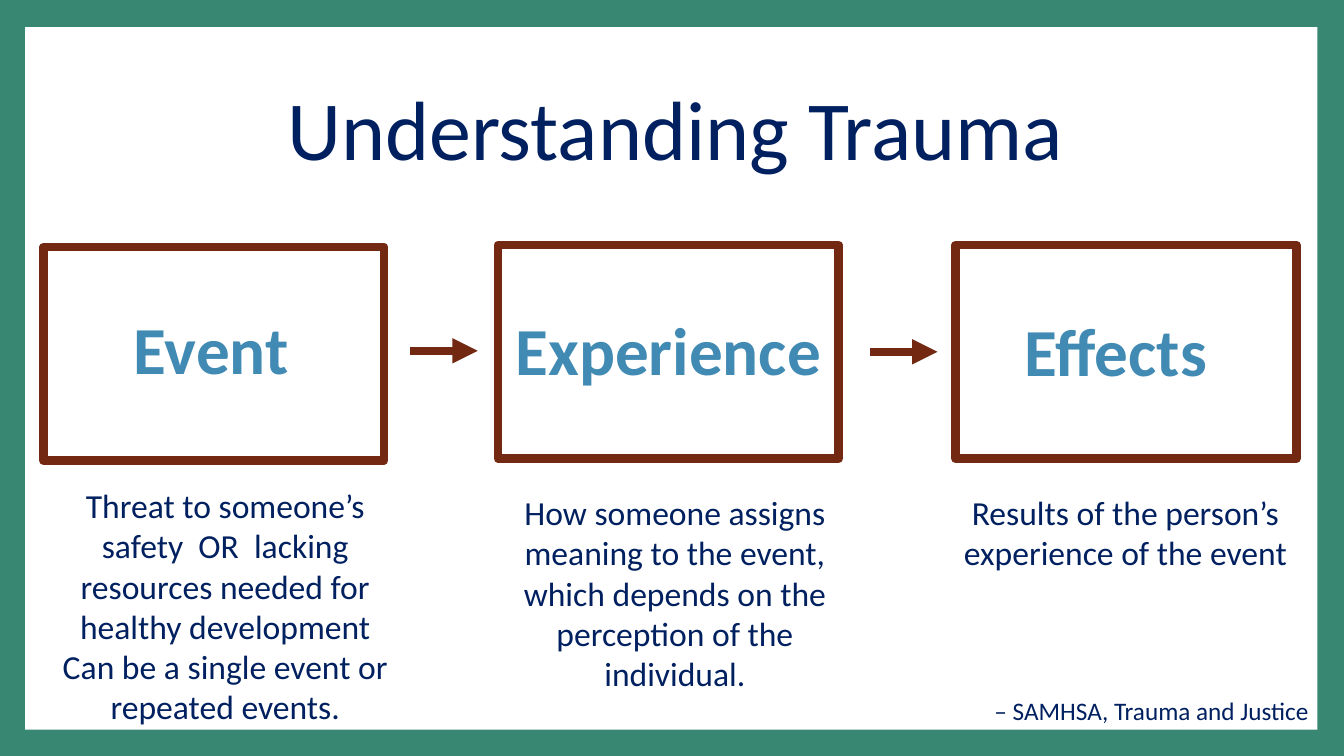
from dataclasses import dataclass

from lxml import etree
from pptx import Presentation
from pptx.dml.color import RGBColor
from pptx.enum import shapes, text
from pptx.oxml import ns
from pptx.util import Pt

GREEN = RGBColor(0x38, 0x87, 0x73)
WHITE = RGBColor(0xFF, 0xFF, 0xFF)
NAVY = RGBColor(0x00, 0x20, 0x60)
BROWN = RGBColor(0x72, 0x28, 0x11)
BLUE = RGBColor(0x41, 0x8A, 0xB3)

FONT = "Calibri"
CENTER, LEFT, RIGHT = text.PP_ALIGN.CENTER, text.PP_ALIGN.LEFT, text.PP_ALIGN.RIGHT
BOX_W, BOX_H = 243.4, 152.6
LINE_W = 6
ARROW_LEN = 48.2


@dataclass
class Label:
    x: float
    y: float
    w: float
    h: float
    lines: list[str]
    size: float = 24
    color: RGBColor = NAVY
    bold: bool = False
    align: text.PP_ALIGN = CENTER


@dataclass
class Stage:
    x: float
    y: float
    heading: Label
    description: Label


@dataclass
class Arrow:
    x: float
    y: float


def heading(x: float, y: float, w: float, word: str, align=CENTER) -> Label:
    return Label(x, y, w, 65.5, [word], 48, BLUE, True, align)


STAGES = [
    Stage(31, 176.4, heading(49, 216, 203.8, "Event"),
          Label(18, 342.7, 285.8, 181,
                ["Threat to someone’s",
                 "safety  OR  lacking resources needed for healthy development",
                 "Can be a single event or repeated events."])),
    Stage(355.7, 175, heading(355.7, 216.7, BOX_W, "Experience"),
          Label(358.6, 347.8, 247, 152.6,
                ["How someone assigns meaning to the event, which depends on "
                 "the perception of the individual."])),
    Stage(682.6, 175, heading(725, 217.4, 235, "Effects", LEFT),
          Label(672.5, 347.8, 262.8, 65.5,
                ["Results of the person’s experience of the event"])),
]
ARROWS = [Arrow(293, 250.6), Arrow(621.4, 251.3)]
SOURCE = Label(690.5, 493.2, 251.3, 28.8, ["– SAMHSA, Trauma and Justice"],
               size=18, align=RIGHT)


def style(p, size: float, color: RGBColor, bold: bool, align) -> None:
    p.alignment = align
    p.font.name = FONT
    p.font.size = Pt(size)
    p.font.bold = bold
    p.font.color.rgb = color


def add_rect(s, x: float, y: float, w: float, h: float):
    sp = s.shapes.add_shape(shapes.MSO_SHAPE.RECTANGLE, Pt(x), Pt(y), Pt(w), Pt(h))
    sp.shadow.inherit = False
    return sp


def add_label(s, label: Label) -> None:
    sp = s.shapes.add_textbox(Pt(label.x), Pt(label.y), Pt(label.w), Pt(label.h))
    tf = sp.text_frame
    tf.word_wrap = True
    tf.text = "\n".join(label.lines)
    for p in tf.paragraphs:
        style(p, label.size, label.color, label.bold, label.align)


def add_stage(s, stage: Stage) -> None:
    sp = add_rect(s, stage.x, stage.y, BOX_W, BOX_H)
    sp.fill.background()
    sp.line.color.rgb = BROWN
    sp.line.width = Pt(LINE_W)
    add_label(s, stage.heading)
    add_label(s, stage.description)


def add_arrow(s, arrow: Arrow) -> None:
    c = s.shapes.add_connector(shapes.MSO_CONNECTOR.STRAIGHT, Pt(arrow.x), Pt(arrow.y),
                               Pt(arrow.x + ARROW_LEN), Pt(arrow.y))
    c.line.color.rgb = BROWN
    c.line.width = Pt(LINE_W)
    etree.SubElement(c.line._get_or_add_ln(), ns.qn("a:tailEnd"), type="triangle")
    etree.SubElement(c._element.spPr, ns.qn("a:effectLst"))


def main() -> None:
    prs = Presentation()
    prs.slide_width, prs.slide_height = Pt(960), Pt(540)
    s = prs.slides.add_slide(prs.slide_layouts[5])

    # Green frame around a white panel, which goes behind the title
    s.background.fill.solid()
    s.background.fill.fore_color.rgb = GREEN
    panel = add_rect(s, 18, 19.4, 923, 501.8)
    panel.fill.solid()
    panel.fill.fore_color.rgb = WHITE
    panel.line.fill.background()
    s.shapes._spTree.insert(2, panel._element)

    # Title
    title = s.shapes.title
    title.left, title.top, title.width, title.height = Pt(93.6), Pt(41.8), Pt(777.6), Pt(106.6)
    tf = title.text_frame
    tf.text = "Understanding Trauma"
    tf.vertical_anchor = text.MSO_ANCHOR.MIDDLE
    p = tf.paragraphs[0]
    style(p, 60, NAVY, False, CENTER)
    p.line_spacing = 0.9

    # Three stages joined by arrows
    for stage in STAGES:
        add_stage(s, stage)
    for arrow in ARROWS:
        add_arrow(s, arrow)

    # Source line
    add_label(s, SOURCE)

    prs.save("out.pptx")


if __name__ == "__main__":
    main()
